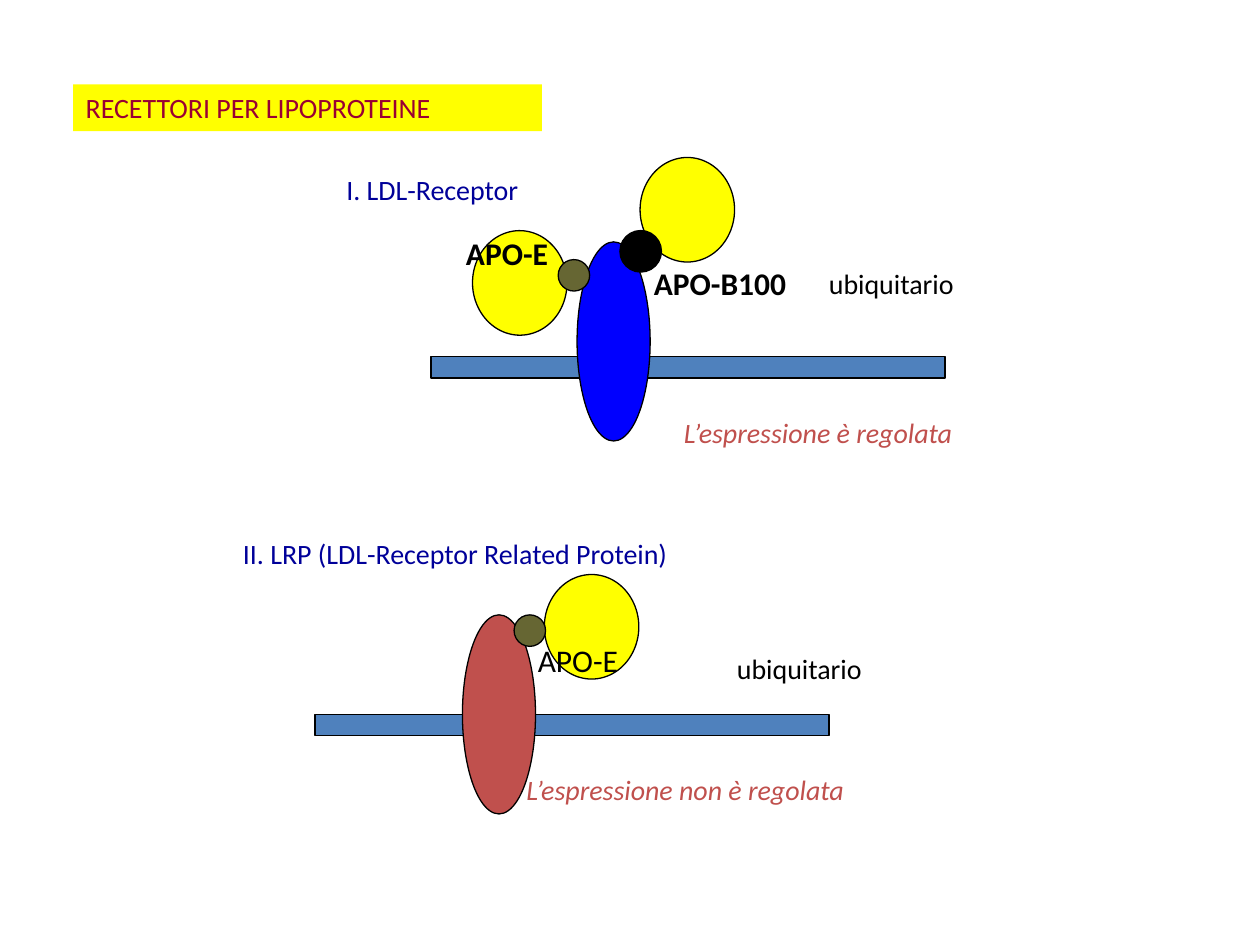
from pptx import Presentation
from pptx.dml.color import RGBColor
from pptx.enum.shapes import MSO_SHAPE
from pptx.enum.text import MSO_ANCHOR, MSO_AUTO_SIZE, PP_ALIGN
from pptx.util import Inches, Pt

RECT, OVAL = MSO_SHAPE.RECTANGLE, MSO_SHAPE.OVAL
TOP, LEFT, NO_FIT = MSO_ANCHOR.TOP, PP_ALIGN.LEFT, MSO_AUTO_SIZE.NONE

BLACK = RGBColor(0x00, 0x00, 0x00)
YELLOW = RGBColor(0xFF, 0xFF, 0x00)
BLUE = RGBColor(0x00, 0x00, 0xFF)
NAVY = RGBColor(0x00, 0x00, 0x99)
STEEL = RGBColor(0x4F, 0x81, 0xBD)
RED = RGBColor(0xC0, 0x50, 0x4D)
CRIMSON = RGBColor(0x99, 0x00, 0x33)
OLIVE = RGBColor(0x66, 0x66, 0x33)

# Sizes shared by both receptor drawings
MEMBRANE = (4.08, 0.17)
RECEPTOR = (0.58, 1.58)
PARTICLE = (0.75, 0.83)
LINE_H = 0.37
APO_H = 0.33


def write(sp, text, color, size=16, **font):
    """Put one left-aligned line of text into a shape."""
    tf = sp.text_frame
    frame = dict(word_wrap=True, auto_size=NO_FIT, vertical_anchor=TOP)
    for name, value in frame.items():
        setattr(tf, name, value)
    p = tf.paragraphs[0]
    p.alignment = LEFT
    r = p.add_run()
    r.text = text
    for name, value in dict(name="Calibri", size=Pt(size), **font).items():
        setattr(r.font, name, value)
    r.font.color.rgb = color


def add_label(shapes, pos, width, text, color, height=LINE_H, **font):
    box = map(Inches, (*pos, width, height))
    write(shapes.add_textbox(*box), text, color, **font)


def add_part(shapes, kind, pos, size, color, rotation=0):
    """Draw an outlined membrane, receptor or particle."""
    sp = shapes.add_shape(kind, *map(Inches, (*pos, *size)))
    sp.fill.solid()
    sp.fill.fore_color.rgb = color
    sp.line.color.rgb = BLACK
    sp.line.width = Pt(0.75)
    sp.shadow.inherit = False
    sp.rotation = rotation


def add_lipoprotein(s, particle, apo, apo_size, apo_color, label, width, text,
                    bold=False, rotation=0):
    """Group a particle with its apoprotein and the name of it."""
    shapes = s.shapes.add_group_shape().shapes
    add_part(shapes, OVAL, particle, PARTICLE, YELLOW, rotation)
    add_part(shapes, OVAL, apo, (apo_size, apo_size), apo_color, rotation)
    add_label(shapes, label, width, text, BLACK, APO_H, size=18, bold=bold)


def add_receptor(s, membrane, receptor, color):
    add_part(s.shapes, RECT, membrane, MEMBRANE, STEEL)
    add_part(s.shapes, OVAL, receptor, RECEPTOR, color)


def add_title(s, text):
    sp = s.shapes.title
    box = dict(left=0.58, top=0.67, width=3.72, height=LINE_H)
    for name, value in box.items():
        setattr(sp, name, Inches(value))
    sp.fill.solid()
    sp.fill.fore_color.rgb = YELLOW
    write(sp, text, CRIMSON)


def main():
    prs = Presentation()
    prs.slide_width, prs.slide_height = Inches(10), Inches(7.5)
    s = prs.slides.add_slide(prs.slide_layouts[5])
    add_title(s, "RECETTORI PER LIPOPROTEINE")

    # I. LDL receptor: binds APO-B100 and APO-E
    add_receptor(s, (3.42, 2.83), (4.58, 1.92), BLUE)
    add_label(s.shapes, (6.48, 2.07), 1.31, "ubiquitario", BLACK)
    add_label(s.shapes, (2.65, 1.32), 1.89, "I. LDL-Receptor", NAVY)
    add_lipoprotein(s, (5.08, 1.25), (4.92, 1.83), 0.33, BLACK,
                    (5.09, 2.05), 1.32, "APO-B100", bold=True)
    add_label(s.shapes, (5.33, 3.25), 2.68, "L’espressione è regolata", RED,
              italic=True)
    add_lipoprotein(s, (3.75, 1.83), (4.43, 2.06), 0.25, OLIVE,
                    (3.6, 1.81), 1.13, "APO-E", bold=True, rotation=179)

    # II. LRP: binds APO-E only
    add_receptor(s, (2.5, 5.67), (3.67, 4.88), RED)
    add_label(s.shapes, (1.83, 4.21), 4.28,
              "II. LRP (LDL-Receptor Related Protein)", NAVY)
    add_lipoprotein(s, (4.32, 4.56), (4.08, 4.88), 0.25, OLIVE,
                    (4.17, 5.04), 1.13, "APO-E")
    add_label(s.shapes, (5.75, 5.12), 1.31, "ubiquitario", BLACK)
    add_label(s.shapes, (4.08, 6.08), 3.1, "L’espressione non è regolata", RED,
              italic=True)

    prs.save("out.pptx")


if __name__ == "__main__":
    main()
